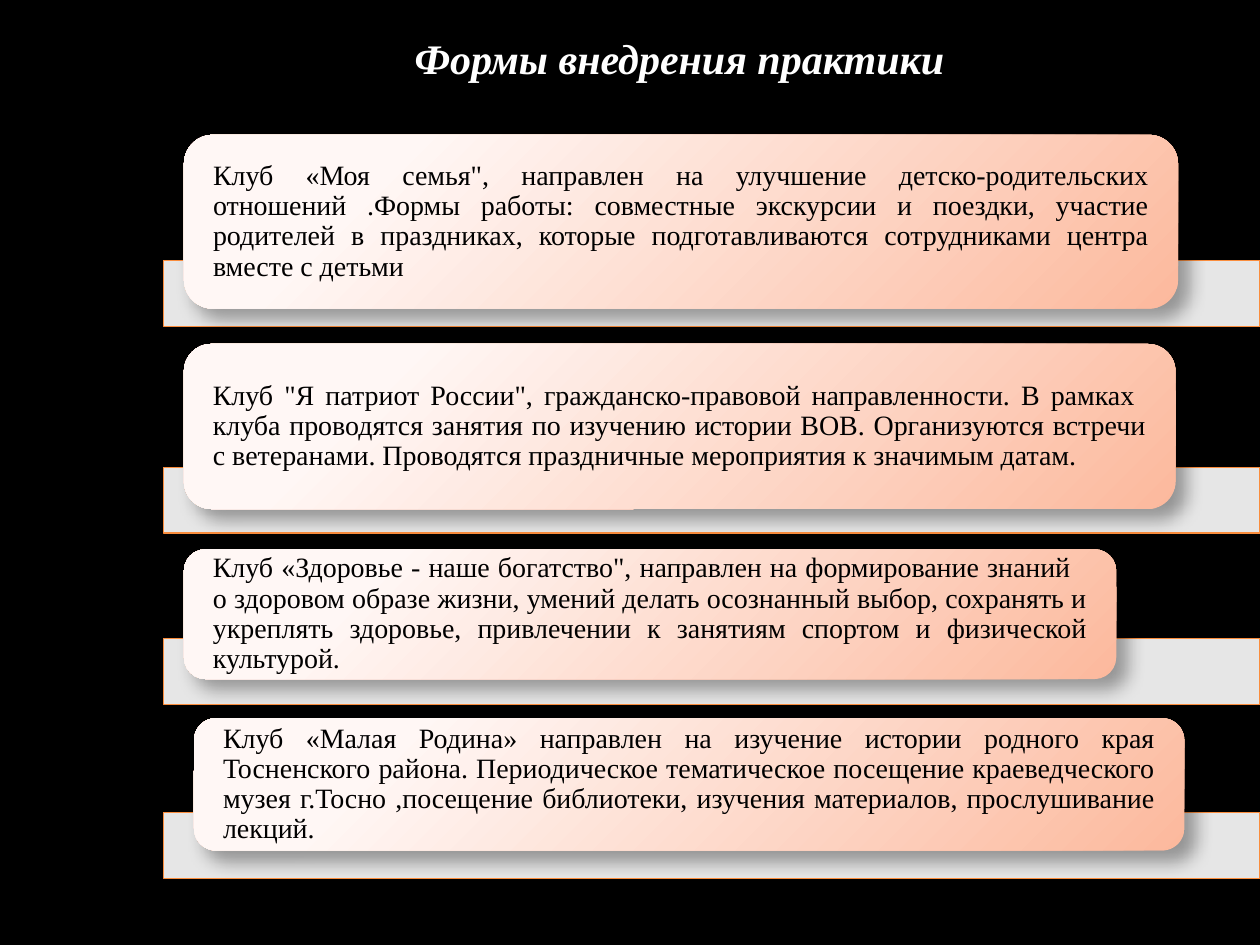
from lxml import etree
from pptx import Presentation
from pptx.dml.color import RGBColor
from pptx.enum import shapes, text
from pptx.oxml import parse_xml
from pptx.oxml.ns import nsdecls, qn
from pptx.util import Pt

BLACK = RGBColor(0x00, 0x00, 0x00)
WHITE = RGBColor(0xFF, 0xFF, 0xFF)
ORANGE = RGBColor(0xFA, 0x8D, 0x3D)
PALE = RGBColor(0xFF, 0xF7, 0xF5)
PEACH = RGBColor(0xFC, 0xB9, 0x9D)
FONT = "Times New Roman"
BAR_X, BAR_W, BAR_H = 93.6, 626.4, 37.44
INSET = 16.56

# Bar top, card box (left, top, width, height), wording
CLUBS = [
    (149.04, (105.12, 77.04, 568.08, 99.36),
     "Клуб «Моя семья\", направлен на улучшение детско-родительских отношений "
     ".Формы работы: совместные экскурсии и поездки, участие родителей в "
     "праздниках, которые подготавливаются сотрудниками центра вместе с детьми"),
    (267.12, (105.12, 196.56, 566.64, 94.32),
     "Клуб \"Я патриот России\", гражданско-правовой направленности. В рамках  "
     "клуба проводятся занятия по изучению истории ВОВ. Организуются встречи с "
     "ветеранами. Проводятся праздничные мероприятия к значимым датам."),
    (365.04, (105.12, 313.92, 532.8, 74.16),
     "Клуб «Здоровье - наше богатство\", направлен на формирование знаний   о "
     "здоровом образе жизни, умений делать осознанный выбор, сохранять и "
     "укреплять здоровье, привлечении к занятиям спортом и физической культурой."),
    (464.4, (110.88, 410.4, 565.92, 75.6),
     "Клуб «Малая Родина» направлен на изучение истории родного края "
     "Тосненского района. Периодическое тематическое посещение краеведческого "
     "музея г.Тосно ,посещение библиотеки, изучения материалов, прослушивание "
     "лекций."),
]


def add_run(par, words, size, color, strong=False):
    run = par.add_run()
    run.text = words
    font = run.font
    font.name, font.size, font.color.rgb = FONT, Pt(size), color
    font.bold = font.italic = strong


def add_title(slide, box, words):
    title = slide.shapes.title
    title.left, title.top, title.width, title.height = map(Pt, box)
    frame = title.text_frame
    frame.word_wrap = False
    frame.auto_size = text.MSO_AUTO_SIZE.NONE
    frame.vertical_anchor = text.MSO_ANCHOR.TOP
    par = frame.paragraphs[0]
    par.alignment = text.PP_ALIGN.LEFT
    add_run(par, words, 24, WHITE, True)


def add_bar(slide, box):
    bar = slide.shapes.add_shape(shapes.MSO_SHAPE.RECTANGLE, *map(Pt, box))
    bar.shadow.inherit = False
    bar.fill.solid()
    bar.fill.fore_color.rgb = WHITE
    color = bar.fill._xPr.find(qn("a:solidFill"))[0]
    etree.SubElement(color, qn("a:alpha")).set("val", "90000")
    bar.line.color.rgb = ORANGE
    bar.line.width = Pt(0.75)


def style_card(card):
    """Radial fill from beyond the top left corner, and a soft shadow."""
    props = card._element.spPr
    grad = parse_xml(
        f'<a:gradFill {nsdecls("a")} rotWithShape="1"><a:gsLst>'
        f'<a:gs pos="20000"><a:srgbClr val="{PALE}"/></a:gs>'
        f'<a:gs pos="100000"><a:srgbClr val="{PEACH}"/></a:gs></a:gsLst>'
        '<a:path path="circle"><a:fillToRect l="-15000" t="-15000" '
        'r="115000" b="115000"/></a:path></a:gradFill>')
    props.find(qn("a:prstGeom")).addnext(grad)
    card.line.fill.background()
    card.shadow.inherit = False
    props.find(qn("a:effectLst")).append(parse_xml(
        f'<a:outerShdw {nsdecls("a")} blurRad="{Pt(10.2)}" dist="{Pt(8)}" '
        'dir="2700000" algn="tl" rotWithShape="0">'
        f'<a:srgbClr val="{BLACK}"><a:alpha val="35000"/></a:srgbClr>'
        '</a:outerShdw>'))


def add_card(slide, box, words):
    card = slide.shapes.add_shape(shapes.MSO_SHAPE.ROUNDED_RECTANGLE,
                                  *map(Pt, box))
    style_card(card)
    frame = card.text_frame
    frame.word_wrap = True
    frame.vertical_anchor = text.MSO_ANCHOR.MIDDLE
    # The round corners already push the text in by 0.29 of their radius
    side = INSET - 0.29 * box[3] / 6
    frame.margin_left = frame.margin_right = Pt(side)
    frame.margin_top = frame.margin_bottom = 0
    par = frame.paragraphs[0]
    par.alignment = text.PP_ALIGN.JUSTIFY
    par.line_spacing = 0.9
    add_run(par, words, 16, BLACK)


def main():
    deck = Presentation()
    deck.slide_width, deck.slide_height = Pt(720), Pt(540)
    slide = deck.slides.add_slide(deck.slide_layouts[5])
    slide.background.fill.solid()
    slide.background.fill.fore_color.rgb = BLACK
    for top, box, words in CLUBS:
        add_bar(slide, (BAR_X, top, BAR_W, BAR_H))
        add_card(slide, box, words)
    add_title(slide, (229.68, 15.12, 320.4, 36), "Формы внедрения практики")
    deck.save("out.pptx")


if __name__ == "__main__":
    main()
